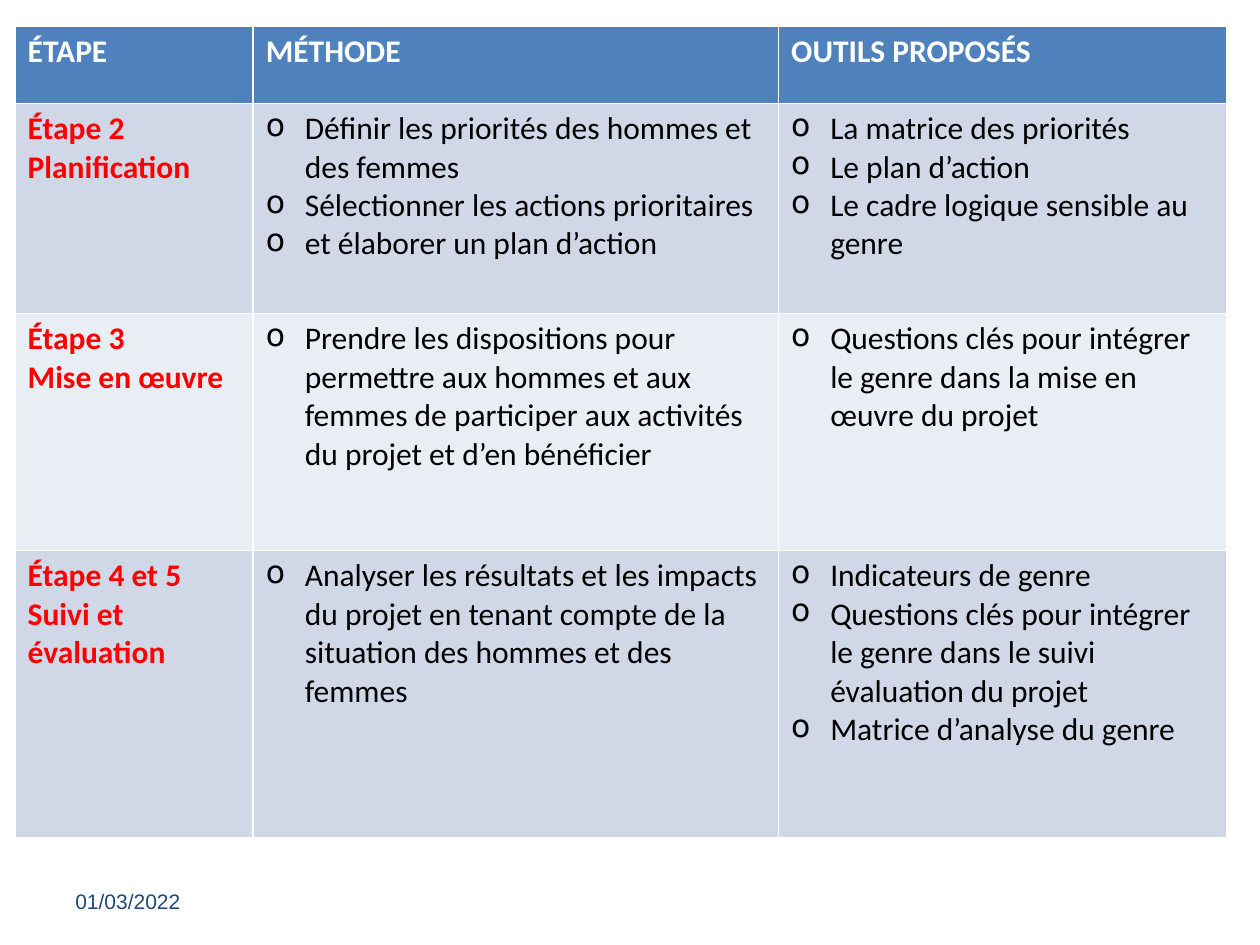
from lxml import etree
from pptx import Presentation
from pptx.dml.color import RGBColor
from pptx.enum import text
from pptx.oxml import ns
from pptx.util import Inches, Pt


def color(hex_code):
    return RGBColor.from_string(hex_code)


def write(frame, lines, size, font, hex_code, bold=False, bulleted=False):
    frame.text = "\n".join(lines)
    for para in frame.paragraphs:
        for span in para.runs:
            span.font.size = Pt(size)
            span.font.name = font
            span.font.bold = bold
            span.font.color.rgb = color(hex_code)
        if bulleted:
            properties = para._p.get_or_add_pPr()
            properties.set("marL", str(Inches(0.31)))
            properties.set("indent", str(-Inches(0.31)))
            etree.SubElement(properties, ns.qn("a:buChar")).set("char", "o")


deck = Presentation()
deck.slide_width, deck.slide_height = Inches(10), Inches(7.5)
page = deck.slides.add_slide(deck.slide_layouts[6])

# Table content: one list of paragraphs per cell
rows = [
    [["ÉTAPE"], ["MÉTHODE"], ["OUTILS PROPOSÉS"]],
    [
        ["Étape 2", "Planification"],
        ["Définir les priorités des hommes et des femmes",
         "Sélectionner les actions prioritaires",
         "et élaborer un plan d’action"],
        ["La matrice des priorités", "Le plan d’action",
         "Le cadre logique sensible au genre"],
    ],
    [
        ["Étape 3", "Mise en œuvre"],
        ["Prendre les dispositions pour permettre aux hommes et aux femmes "
         "de participer aux activités du projet et d’en bénéficier"],
        ["Questions clés pour intégrer le genre dans la mise en œuvre du projet"],
    ],
    [
        ["Étape 4 et 5", "Suivi et évaluation"],
        ["Analyser les résultats et les impacts du projet en tenant compte "
         "de la situation des hommes et des femmes"],
        ["Indicateurs de genre",
         "Questions clés pour intégrer le genre dans le suivi évaluation du projet",
         "Matrice d’analyse du genre"],
    ],
]
column_widths = [1.89, 4.17, 3.56]
row_heights = [0.61, 1.67, 1.88, 2.28]
row_fills = ["4F81BD", "D0D8E8", "E9EDF4", "D0D8E8"]

# Table: the default style supplies the white rules
table = page.shapes.add_table(
    len(rows), len(column_widths), Inches(0.12), Inches(0.21),
    Inches(sum(column_widths)), Inches(sum(row_heights))).table
for column, width in zip(table.columns, column_widths):
    column.width = Inches(width)

for r, cells in enumerate(rows):
    table.rows[r].height = Inches(row_heights[r])
    for c, lines in enumerate(cells):
        cell = table.cell(r, c)
        cell.fill.solid()
        cell.fill.fore_color.rgb = color(row_fills[r])
        header, stage = r == 0, c == 0
        ink = "FFFFFF" if header else "FF0000" if stage else "000000"
        write(cell.text_frame, lines, 18, "Calibri", ink,
              bold=header or stage, bulleted=not (header or stage))

# Date
box = page.shapes.add_textbox(Inches(0.5), Inches(6.95), Inches(2.33), Inches(0.4))
box.text_frame.word_wrap = True
box.text_frame.vertical_anchor = text.MSO_ANCHOR.MIDDLE
write(box.text_frame, ["01/03/2022"], 12, "Arial", "1F497D")

deck.save("out.pptx")
